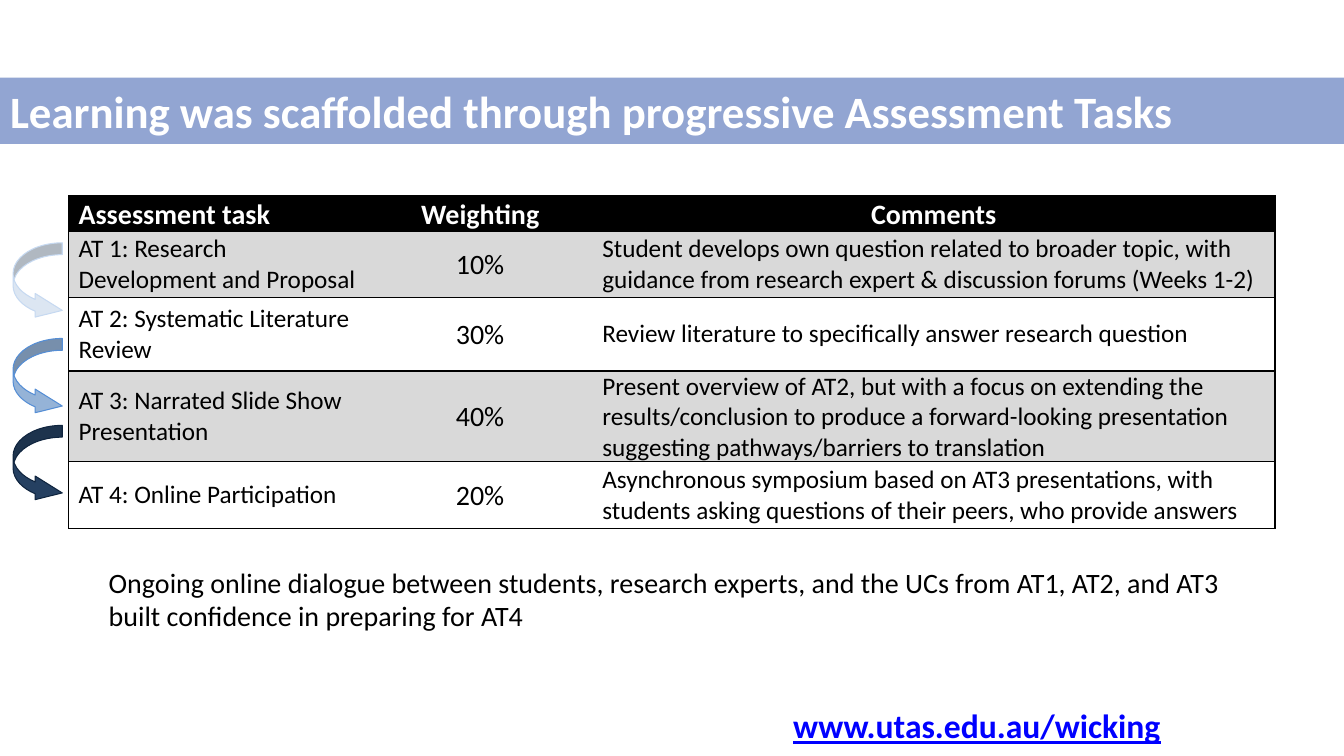
"""Build a slide on progressive assessment tasks with a weighting table."""
from lxml.etree import SubElement
from pptx import Presentation
from pptx.dml.color import RGBColor
from pptx.enum.shapes import MSO_SHAPE
from pptx.enum.text import MSO_ANCHOR, PP_ALIGN
from pptx.oxml.ns import qn
from pptx.util import Cm, Pt

COLOURS = {
    "bar": "4A69B4", "white": "FFFFFF", "black": "000000",
    "grey": "D9D9D9", "link": "0000FF",
}


def write_text(paragraph, text, size=20, colour="black", bold=False,
               underline=False, align=PP_ALIGN.LEFT, spacing=1.0):
    paragraph.alignment = align
    paragraph.line_spacing = spacing
    run = paragraph.add_run()
    run.text = text
    run.font.name = "Calibri"
    run.font.size = Pt(size)
    run.font.bold = bold
    run.font.underline = underline
    run.font.color.rgb = RGBColor.from_string(COLOURS[colour])


presentation = Presentation()
presentation.slide_width = Cm(33.87)
presentation.slide_height = Cm(19.05)
slide = presentation.slides.add_slide(presentation.slide_layouts[5])
shapes = slide.shapes

bar = shapes.add_shape(MSO_SHAPE.RECTANGLE, Cm(-0.05), Cm(1.96), Cm(33.92), Cm(1.67))
bar.shadow.inherit = False
bar.fill.solid()
bar.fill.fore_color.rgb = RGBColor.from_string(COLOURS["bar"])
bar.line.fill.background()
bar_colour = bar._element.spPr.find(".//" + qn("a:srgbClr"))
SubElement(bar_colour, qn("a:alpha"), val="60000")

title = shapes.title
title._element.addprevious(bar._element)
title.left, title.top, title.width, title.height = Cm(0), Cm(1.96), Cm(33.92), Cm(1.67)
title.text_frame.vertical_anchor = MSO_ANCHOR.MIDDLE
write_text(title.text_frame.paragraphs[0],
           "Learning was scaffolded through progressive Assessment Tasks",
           size=32, colour="white", bold=True)

address = shapes.add_textbox(Cm(19.74), Cm(17.65), Cm(10), Cm(1.28))
address.text_frame.word_wrap = True
write_text(address.text_frame.paragraphs[0], "www.utas.edu.au/wicking",
           size=24, colour="link", bold=True, underline=True)

rows = [
    ("Assessment task", "Weighting", "Comments"),
    ("AT 1: Research Development and Proposal", "10%",
     "Student develops own question related to broader topic, with guidance "
     "from research expert & discussion forums (Weeks 1-2)"),
    ("AT 2: Systematic Literature Review", "30%",
     "Review literature to specifically answer research question"),
    ("AT 3: Narrated Slide Show Presentation", "40%",
     "Present overview of AT2, but with a focus on extending the "
     "results/conclusion to produce a forward-looking presentation "
     "suggesting pathways/barriers to translation"),
    ("AT 4: Online Participation", "20%",
     "Asynchronous symposium based on AT3 presentations, with students "
     "asking questions of their peers, who provide answers"),
]
column_widths = [7.54, 5.66, 17.2]
row_heights = [0.84, 1.68, 1.85, 1.68, 1.68]
table = shapes.add_table(len(rows), len(column_widths), Cm(1.73), Cm(4.93),
                         Cm(sum(column_widths)), Cm(sum(row_heights))).table
table._tbl.tblPr.find(qn("a:tableStyleId")).text = "{2D5ABB26-0587-4C30-8999-92F81FD0307C}"
for column, width in zip(table.columns, column_widths):
    column.width = Cm(width)

for row_index, row in enumerate(rows):
    table.rows[row_index].height = Cm(row_heights[row_index])
    header = row_index == 0
    fill_name = "black" if header else ("grey" if row_index % 2 else "white")
    for column_index, text in enumerate(row):
        cell = table.cell(row_index, column_index)
        weighting = column_index == 1
        cell.margin_left = cell.margin_right = Cm(0.18 if weighting else 0.25)
        cell.margin_top = cell.margin_bottom = Cm(0)
        cell.vertical_anchor = MSO_ANCHOR.TOP if header else MSO_ANCHOR.MIDDLE
        sides = {"a:lnL": column_index == 0, "a:lnR": column_index == 2,
                 "a:lnT": True, "a:lnB": True}
        for side, visible in sides.items():
            if visible:
                border = SubElement(cell._tc.get_or_add_tcPr(), qn(side), w=str(Pt(1)))
                border_fill = SubElement(border, qn("a:solidFill"))
                SubElement(border_fill, qn("a:srgbClr"), val=COLOURS["black"])
        cell.fill.solid()
        cell.fill.fore_color.rgb = RGBColor.from_string(COLOURS[fill_name])
        centred = weighting or (header and column_index == 2)
        write_text(cell.text_frame.paragraphs[0], text,
                   size=20 if header or weighting else 18,
                   colour="white" if header else "black", bold=header,
                   align=PP_ALIGN.CENTER if centred else PP_ALIGN.LEFT,
                   spacing=1.05 if header or weighting else 1.0)

arrows = [(6.12, "DCE6F2", "C6D9F1"), (8.53, "95B3D7", "558ED5"), (10.72, "254061", "0F243E")]
for top, fill_colour, line_colour in arrows:
    arrow = shapes.add_shape(MSO_SHAPE.CURVED_RIGHT_ARROW, Cm(0.33), Cm(top), Cm(1.24), Cm(2))
    arrow.shadow.inherit = False
    for index, adjustment in enumerate((0.24, 0.48, 0.55)):
        arrow.adjustments[index] = adjustment
    arrow.fill.solid()
    arrow.fill.fore_color.rgb = RGBColor.from_string(fill_colour)
    arrow.line.color.rgb = RGBColor.from_string(line_colour)
    arrow.line.width = Pt(0.75)

dialogue = shapes.add_textbox(Cm(2.49), Cm(14.12), Cm(28.93), Cm(1.96)).text_frame
dialogue.word_wrap = False
write_text(dialogue.paragraphs[0],
           "Ongoing online dialogue between students, research experts, "
           "and the UCs from AT1, AT2, and AT3")
write_text(dialogue.add_paragraph(), "built confidence in preparing for AT4")

presentation.save("out.pptx")
